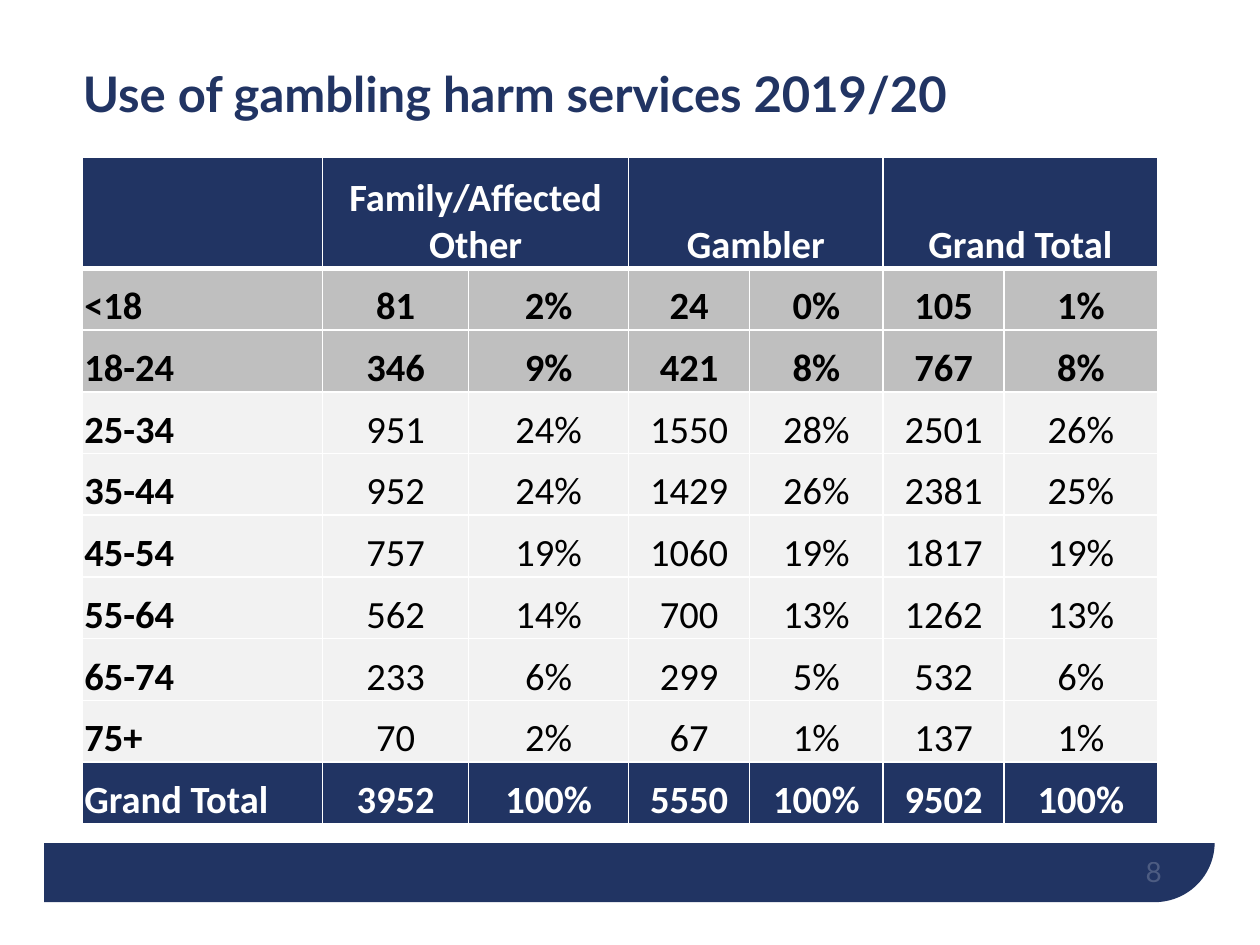
from lxml.etree import SubElement
from pptx import Presentation
from pptx.dml.color import RGBColor
from pptx.enum.shapes import MSO_SHAPE
from pptx.enum.text import MSO_ANCHOR, PP_ALIGN
from pptx.oxml import parse_xml
from pptx.oxml.ns import nsdecls, qn
from pptx.util import Inches, Pt

NAVY = RGBColor(0x21, 0x34, 0x63)
WHITE = RGBColor(0xFF, 0xFF, 0xFF)
BLACK = RGBColor(0, 0, 0)
GREY = RGBColor(0xBF, 0xBF, 0xBF)
PALE = RGBColor(0xF2, 0xF2, 0xF2)

COLS = [1.91, 1.16, 1.27, 0.96, 1.06, 0.96, 1.22]
HEAD = ["", "Family/Affected Other", "", "Gambler", "", "Grand Total", ""]
ROWS = [
    ["<18", "81", "2%", "24", "0%", "105", "1%"],
    ["18-24", "346", "9%", "421", "8%", "767", "8%"],
    ["25-34", "951", "24%", "1550", "28%", "2501", "26%"],
    ["35-44", "952", "24%", "1429", "26%", "2381", "25%"],
    ["45-54", "757", "19%", "1060", "19%", "1817", "19%"],
    ["55-64", "562", "14%", "700", "13%", "1262", "13%"],
    ["65-74", "233", "6%", "299", "5%", "532", "6%"],
    ["75+", "70", "2%", "67", "1%", "137", "1%"],
    ["Grand Total", "3952", "100%", "5550", "100%", "9502", "100%"],
]


def add_block(slide, kind, box, color):
    block = slide.shapes.add_shape(kind, *map(Inches, box))
    block.shadow.inherit = False
    block.fill.solid()
    block.fill.fore_color.rgb = color
    block.line.fill.background()
    return block


def add_text(slide, box, text, size, color, anchor, inset):
    frame = slide.shapes.add_textbox(*map(Inches, box)).text_frame
    frame.word_wrap = True
    frame.vertical_anchor = anchor
    frame.margin_left = frame.margin_right = Inches(inset)
    frame.margin_top = frame.margin_bottom = Inches(inset / 2)
    para = frame.paragraphs[0]
    run = para.add_run()
    run.text = text
    run.font.name = "Lato"
    run.font.size = Pt(size)
    run.font.color.rgb = color
    return para


def add_frame(slide, box):
    left, top, width, height = box
    # Navy panel, round at its lower right, under a white page
    panel = add_block(slide, MSO_SHAPE.ROUND_1_RECTANGLE,
                      (left + 0.35, top + 0.37, width - 0.71, height - 0.71), NAVY)
    panel.adjustments[0] = 0.07
    panel.rotation = 180
    panel._element.spPr.find(qn("a:xfrm")).set("flipH", "1")
    add_block(slide, MSO_SHAPE.RECTANGLE, (left, top, width, height - 0.81), WHITE)
    # Faint page number
    para = add_text(slide, (left + 6.97, top + 6.65, 2.25, 0.4), "8", 16,
                    WHITE, MSO_ANCHOR.BOTTOM, 0)
    para.alignment = PP_ALIGN.RIGHT
    color = next(para._p.iter(qn("a:srgbClr")))
    SubElement(color, qn("a:alpha")).set("val", "20000")


def add_title(slide, box):
    para = add_text(slide, box, "Use of gambling harm services 2019/20", 28,
                    NAVY, MSO_ANCHOR.MIDDLE, 0.1)
    para.line_spacing = 0.9
    para.runs[0].font.bold = True


def set_edges(cell, widths):
    props = cell._tc.get_or_add_tcPr()
    for i, (side, width) in enumerate(zip("LRTB", widths)):
        props.insert(i, parse_xml(
            f'<a:ln{side} {nsdecls("a")} w="{Pt(width)}"><a:solidFill>'
            f'<a:srgbClr val="{WHITE}"/></a:solidFill></a:ln{side}>'))


def fill_cell(cell, text, fill, color, bold, align):
    cell.fill.solid()
    cell.fill.fore_color.rgb = fill
    cell.vertical_anchor = MSO_ANCHOR.BOTTOM
    cell.margin_left = cell.margin_right = cell.margin_top = Inches(0.02)
    cell.margin_bottom = 0
    cell.text = text
    para = cell.text_frame.paragraphs[0]
    para.alignment = align
    para.font.name = "Calibri"
    para.font.size = Pt(22)
    para.font.bold = bold
    para.font.color.rgb = color


def add_grid(slide, box):
    data = [HEAD] + ROWS
    last = len(data) - 1
    table = slide.shapes.add_table(len(data), len(COLS), *map(Inches, box)).table
    for col, width in zip(table.columns, COLS):
        col.width = Inches(width)
    for r, texts in enumerate(data):
        table.rows[r].height = Inches(0.49 if r else 0.88)
        dark = r in (0, last)
        fill = NAVY if dark else GREY if r < 3 else PALE
        for c, text in enumerate(texts):
            cell = table.cell(r, c)
            fill_cell(cell, text, fill, WHITE if dark else BLACK,
                      dark or r < 3 or c == 0,
                      PP_ALIGN.CENTER if c else PP_ALIGN.LEFT)
            set_edges(cell, (1, 1, 3 if r == 1 else 1, 3 if r == 0 else 1))
    # Each heading spans a count and a percentage
    for c in range(1, len(COLS), 2):
        table.cell(0, c).merge(table.cell(0, c + 1))


def main():
    deck = Presentation()
    deck.slide_width, deck.slide_height = Inches(10), Inches(7.5)
    slide = deck.slides.add_slide(deck.slide_layouts[6])
    add_frame(slide, (0, 0, 10, 7.5))
    add_grid(slide, (0.65, 1.25, 8.54, 5.29))
    add_title(slide, (0.56, 0.18, 8.62, 1.17))
    deck.save("out.pptx")


if __name__ == "__main__":
    main()
